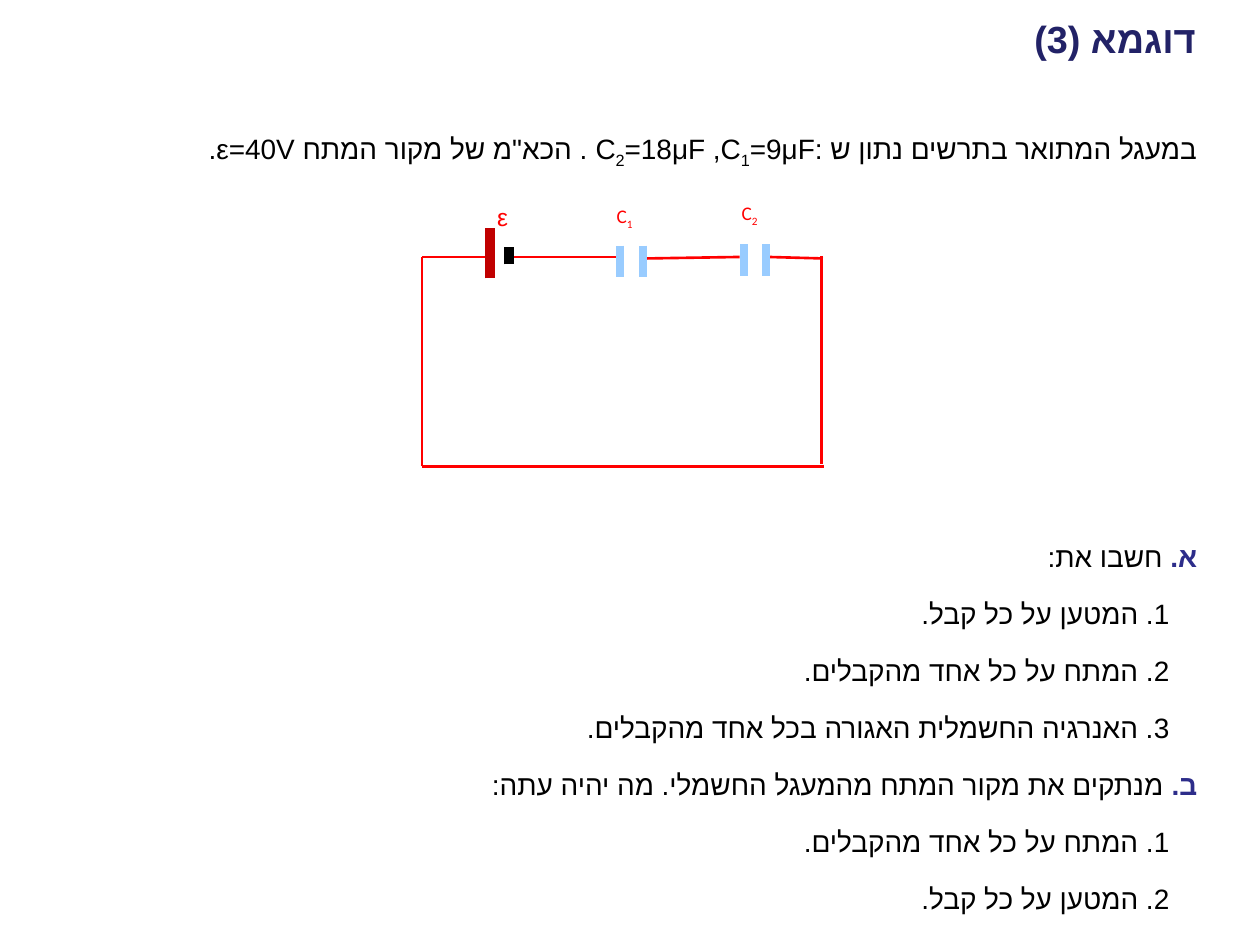
"""Build a right-to-left physics exercise slide with a capacitor circuit."""
from dataclasses import dataclass

import pptx
import pptx.dml.color
import pptx.enum.shapes
import pptx.enum.text
import pptx.oxml.xmlchemy
import pptx.util
from pptx.util import Cm


@dataclass(frozen=True)
class Theme:
    """Hold the colours, fonts and sizes."""
    title: str = "222267"
    mark: str = "2D2D8A"
    text: str = "000000"
    wire: str = "FF0000"
    plate: str = "99CCFF"
    source: str = "C00000"
    main: str = "Arial"
    label: str = "Calibri"
    head: float = 21.6
    body: float = 16
    small: float = 11
    large: float = 14
    thin: float = 1.5
    thick: float = 4.5
    heavy: float = 6


@dataclass(frozen=True)
class Span:
    """Describe one stretch of text."""
    text: str
    size: float
    color: str
    font: str
    bold: bool = False
    sub: bool = False


@dataclass(frozen=True)
class Line:
    """Describe one paragraph of the exercise."""
    spans: list[Span]
    level: int = 0
    before: float = 0


@dataclass(frozen=True)
class Wire:
    """Describe a straight stroke in centimetres."""
    start: tuple[float, float]
    end: tuple[float, float]
    color: str
    width: float


@dataclass(frozen=True)
class Label:
    """Describe a circuit label in centimetres."""
    box: tuple[float, float, float, float]
    spans: list[Span]


LOOK = Theme()


def plain(text: str, sub: bool = False) -> Span:
    """Return body text."""
    return Span(text, LOOK.body, LOOK.text, LOOK.main, sub=sub)


def mark(text: str) -> Span:
    """Return a bold section letter."""
    return Span(text, LOOK.body, LOOK.mark, LOOK.main, bold=True)


def item(text: str) -> Line:
    """Return an indented numbered line."""
    return Line([plain(text)], level=1)


def tag(text: str, sub: bool = False) -> Span:
    """Return small red label text."""
    return Span(text, LOOK.small, LOOK.wire, LOOK.label, sub=sub)


def lead(x1: float, y1: float, x2: float, y2: float) -> Wire:
    """Return a connecting wire."""
    return Wire((x1, y1), (x2, y2), LOOK.wire, LOOK.thin)


def plates(left: float, top: float) -> list[Wire]:
    """Return the two plates of a capacitor."""
    return [Wire((x, top), (x, top + 0.64), LOOK.plate, LOOK.thick)
            for x in (left, left + 0.46)]


LINES = [
    Line([plain("במעגל המתואר בתרשים נתון ש :C"), plain("2", True),
          plain("=18μF ,C"), plain("1", True),
          plain("=9μF . הכא\"מ של מקור המתח ε=40V.")]),
    Line([mark("א."), plain(" חשבו את:")], before=198),
    item("1. המטען על כל קבל."),
    item("2. המתח על כל אחד מהקבלים."),
    item("3. האנרגיה החשמלית האגורה בכל אחד מהקבלים."),
    Line([mark("ב. "), plain("מנתקים את מקור המתח מהמעגל החשמלי. מה יהיה עתה:")]),
    item("1. המתח על כל אחד מהקבלים."),
    item("2. המטען על כל קבל."),
]

WIRES = [
    lead(8.51, 9.4, 8.51, 5.18),
    lead(8.51, 9.4, 16.61, 9.4),
    lead(9.78, 5.18, 8.51, 5.18),
    lead(12.5, 5.18, 10.31, 5.18),
    lead(14.91, 5.18, 13.03, 5.21),
    lead(15.49, 5.18, 16.59, 5.21),
    lead(16.56, 5.16, 16.56, 9.35),
    *plates(12.5, 4.95),
    *plates(14.99, 4.92),
    Wire((9.88, 5.61), (9.88, 4.6), LOOK.source, LOOK.heavy),
    Wire((10.26, 5.33), (10.26, 4.98), LOOK.text, LOOK.heavy),
]

LABELS = [
    Label((11.1, 3.99, 1.9, 0.97), [tag("C"), tag("1", True)]),
    Label((14.25, 3.94, 1.27, 0.97), [tag("C"), tag("2", True)]),
    Label((9.22, 3.94, 1.27, 1.02),
          [Span("ε", LOOK.large, LOOK.wire, LOOK.main)]),
]


def place(shape, left: float, top: float, width: float, height: float) -> None:
    """Move and size a shape."""
    shape.left, shape.top = Cm(left), Cm(top)
    shape.width, shape.height = Cm(width), Cm(height)


def write(para, spans: list[Span]) -> None:
    """Fill a paragraph with right-to-left styled runs."""
    para.alignment = pptx.enum.text.PP_ALIGN.RIGHT
    para._p.get_or_add_pPr().set("rtl", "1")
    for span in spans:
        run = para.add_run()
        run.text = span.text
        font = run.font
        font.name, font.bold = span.font, span.bold
        font.size = pptx.util.Pt(span.size)
        font.color.rgb = pptx.dml.color.RGBColor.from_string(span.color)
        props = run._r.get_or_add_rPr()
        script = pptx.oxml.xmlchemy.OxmlElement("a:cs")
        script.set("typeface", span.font)
        props.append(script)
        if span.sub:
            props.set("baseline", "-25000")


def fill(frame, lines: list[Line]) -> None:
    """Write the exercise into the body frame."""
    for spot, line in enumerate(lines):
        para = frame.add_paragraph() if spot else frame.paragraphs[0]
        para.level = line.level
        para.line_spacing = 1.7
        para.space_before = pptx.util.Pt(line.before)
        para.space_after = pptx.util.Pt(0)
        props = para._p.get_or_add_pPr()
        props.set("marL", str(Cm(0.56 * line.level)))
        props.set("indent", "0")
        props.append(pptx.oxml.xmlchemy.OxmlElement("a:buNone"))
        write(para, line.spans)


def stroke(group, wire: Wire) -> None:
    """Draw one wire or plate."""
    ends = [Cm(value) for value in (*wire.start, *wire.end)]
    link = group.shapes.add_connector(
        pptx.enum.shapes.MSO_CONNECTOR.STRAIGHT, *ends)
    link.line.color.rgb = pptx.dml.color.RGBColor.from_string(wire.color)
    link.line.width = pptx.util.Pt(wire.width)
    link._element.spPr.append(pptx.oxml.xmlchemy.OxmlElement("a:effectLst"))


def name(group, label: Label) -> None:
    """Add one circuit label."""
    box = group.shapes.add_textbox(*[Cm(value) for value in label.box])
    box.text_frame.word_wrap = True
    write(box.text_frame.paragraphs[0], label.spans)


def main() -> None:
    """Build and save the slide."""
    deck = pptx.Presentation()
    deck.slide_width, deck.slide_height = Cm(25.4), Cm(19.05)
    slide = deck.slides.add_slide(deck.slide_layouts[1])
    title, body = slide.placeholders
    place(title, 3.02, 0.28, 21.34, 0.99)
    place(body, 1.5, 1.98, 22.89, 16.76)
    for shape in (title, body):
        shape.text_frame.auto_size = pptx.enum.text.MSO_AUTO_SIZE.NONE
    title.text_frame.vertical_anchor = pptx.enum.text.MSO_ANCHOR.MIDDLE
    write(title.text_frame.paragraphs[0],
          [Span("דוגמא (3)", LOOK.head, LOOK.title, LOOK.main, bold=True)])
    fill(body.text_frame, LINES)
    group = slide.shapes.add_group_shape()
    for wire in WIRES:
        stroke(group, wire)
    for label in LABELS:
        name(group, label)
    deck.save("out.pptx")


if __name__ == "__main__":
    main()
